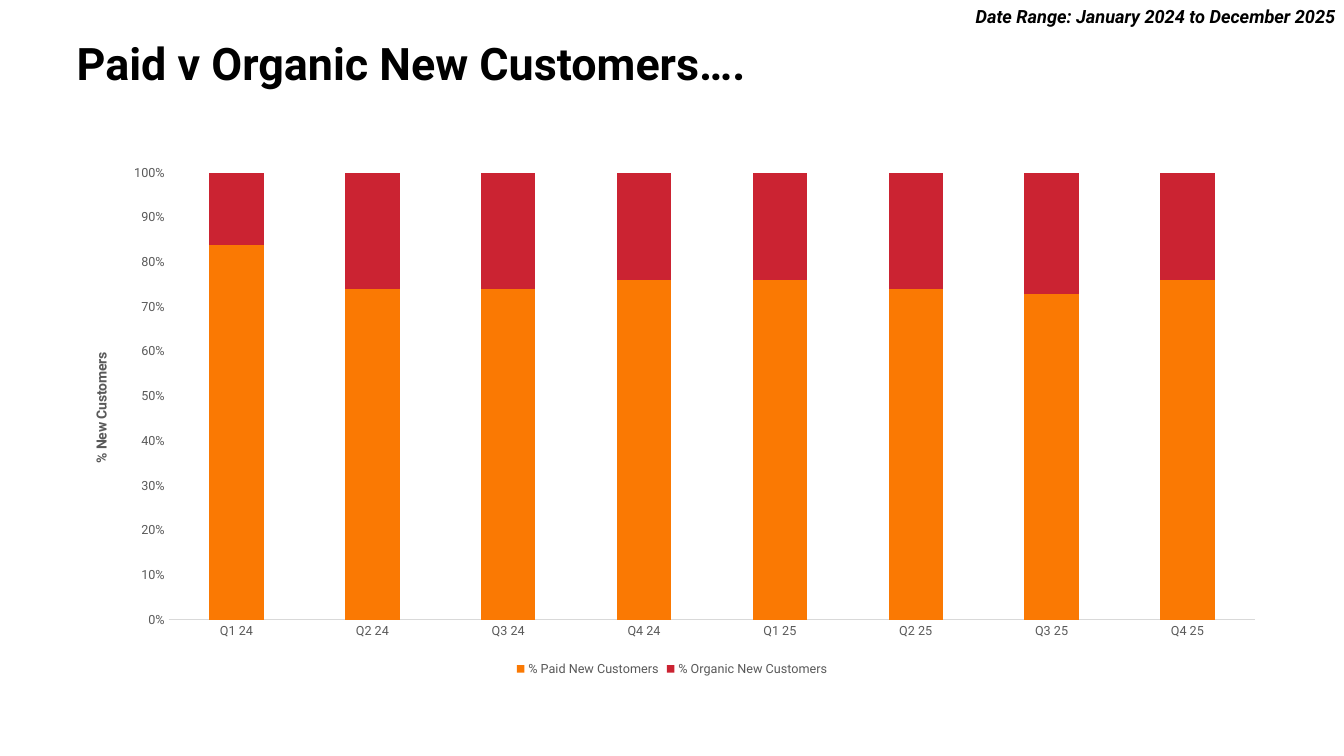
from lxml import etree
from pptx import Presentation
from pptx.chart.data import CategoryChartData
from pptx.dml.color import RGBColor
from pptx.enum.chart import XL_CHART_TYPE, XL_LEGEND_POSITION, XL_TICK_MARK
from pptx.enum.text import MSO_ANCHOR, PP_ALIGN
from pptx.oxml.ns import qn
from pptx.util import Inches, Pt

STACKED = XL_CHART_TYPE.COLUMN_STACKED
BOTTOM = XL_LEGEND_POSITION.BOTTOM
NO_TICK = XL_TICK_MARK.NONE
TOP = MSO_ANCHOR.TOP
LEFT, RIGHT = PP_ALIGN.LEFT, PP_ALIGN.RIGHT

FONT = "Roboto"
COLORS = {
    "text": "000000",
    "label": "595959",
    "axis": "D9D9D9",
    "paid": "FA7903",
    "organic": "CB2332",
}
QUARTERS = [f"Q{quarter} {year}" for year in (24, 25) for quarter in range(1, 5)]
SHARES = {
    "paid": ("% Paid New Customers",
             [0.84, 0.74, 0.74, 0.76, 0.76, 0.74, 0.73, 0.76]),
    "organic": ("% Organic New Customers",
                [0.16, 0.26, 0.26, 0.24, 0.24, 0.26, 0.27, 0.24]),
}


def rgb(name):
    return RGBColor.from_string(COLORS[name])


def style_font(font, size, color="text", bold=False, italic=False):
    font.name = FONT
    font.size = Pt(size)
    font.bold = bold
    font.italic = italic
    font.color.rgb = rgb(color)


def write_text(frame, text, align=LEFT, line_spacing=None, **font_format):
    para = frame.paragraphs[0]
    para.alignment = align
    para.line_spacing = line_spacing
    span = para.add_run()
    span.text = text
    style_font(span.font, **font_format)


def place_layout(layout, target=None, **fractions):
    """Fix a chart part at fractions of the chart's width and height."""
    manual = etree.SubElement(layout, qn("c:manualLayout"))
    settings = {"layoutTarget": target} if target else {}
    settings.update(xMode="edge", yMode="edge", **fractions)
    for tag, value in settings.items():
        etree.SubElement(manual, qn(f"c:{tag}")).set("val", str(value))


def add_title(page, left, top, width, height):
    title = page.shapes.title
    title.left, title.top, title.width, title.height = left, top, width, height
    frame = title.text_frame
    frame.margin_left = frame.margin_right = 0
    frame.margin_top = frame.margin_bottom = 0
    frame.vertical_anchor = TOP
    frame.word_wrap = True
    write_text(frame, "Paid v Organic New Customers….",
               line_spacing=0.9, size=32, bold=True)


def add_date_range(page, left, top, width, height):
    frame = page.shapes.add_textbox(left, top, width, height).text_frame
    frame.word_wrap = True
    write_text(frame, "Date Range: January 2024 to December 2025",
               align=RIGHT, size=13, bold=True, italic=True)


def format_axes(chart):
    for axis in (chart.category_axis, chart.value_axis):
        axis.major_tick_mark = axis.minor_tick_mark = NO_TICK
        axis.has_major_gridlines = False
        style_font(axis.tick_labels.font, 9, "label")

    category_line = chart.category_axis.format.line
    category_line.color.rgb = rgb("axis")
    category_line.width = Pt(0.75)

    shares = chart.value_axis
    shares.minimum_scale, shares.maximum_scale = 0, 1
    shares.major_unit = 0.1
    shares.format.line.fill.background()
    shares.tick_labels.number_format = "0%"
    shares.tick_labels.number_format_is_linked = False
    write_text(shares.axis_title.text_frame, "% New Customers",
               size=10, color="label", bold=True)
    title_layout = shares.axis_title._element.get_or_add_layout() \
        if hasattr(shares.axis_title._element, "get_or_add_layout") \
        else shares.axis_title._element.find(qn("c:layout"))
    place_layout(title_layout, x=0.02, y=0.37)


def add_share_chart(page, left, top, width, height):
    data = CategoryChartData(number_format="0%")
    data.categories = QUARTERS
    for name, values in SHARES.values():
        data.add_series(name, values)
    chart = page.shapes.add_chart(STACKED, left, top, width, height, data).chart
    style_font(chart.font, 10)
    chart.has_title = False

    chart.has_legend = True
    chart.legend.position = BOTTOM
    chart.legend.include_in_layout = False
    style_font(chart.legend.font, 9, "label")

    plot = chart.plots[0]
    plot.gap_width = 150
    plot.overlap = 100
    plot.vary_by_categories = False
    for series, color in zip(plot.series, SHARES):
        series.format.fill.solid()
        series.format.fill.fore_color.rgb = rgb(color)

    format_axes(chart)
    plot_area = chart._chartSpace.chart.plotArea
    layout = plot_area.find(qn("c:layout"))
    if layout is None:
        layout = etree.Element(qn("c:layout"))
        plot_area.insert(0, layout)
    place_layout(layout, target="inner", x=0.085, y=0.034, w=0.896, h=0.851)


def main():
    deck = Presentation()
    deck.slide_width, deck.slide_height = Inches(13.33), Inches(7.5)
    page = deck.slides.add_slide(deck.slide_layouts[5])
    add_title(page, Inches(0.76), Inches(0.41), Inches(11.81), Inches(0.67))
    add_date_range(page, Inches(9.4), Inches(0), Inches(3.94), Inches(0.32))
    add_share_chart(page, Inches(0.65), Inches(1.54), Inches(12.03), Inches(5.21))
    deck.save("out.pptx")


if __name__ == "__main__":
    main()
